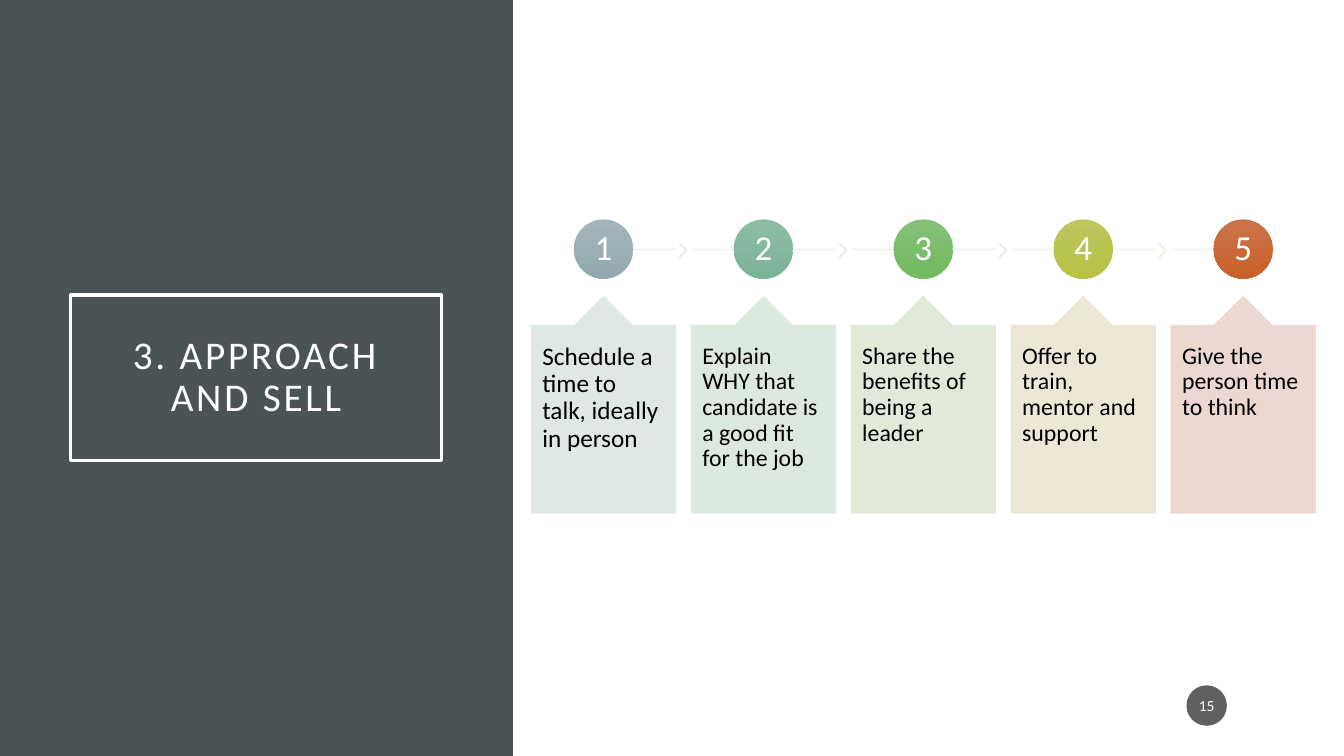
from lxml.etree import SubElement
from pptx import Presentation
from pptx.dml.color import RGBColor
from pptx.enum.shapes import MSO_CONNECTOR as Connector, MSO_SHAPE as Shape
from pptx.enum.text import MSO_ANCHOR as Anchor, PP_ALIGN as Align
from pptx.oxml.ns import qn
from pptx.util import Cm, Pt

FONT = "Calibri"
WHITE = RGBColor(0xFF, 0xFF, 0xFF)
BLACK = RGBColor(0x00, 0x00, 0x00)
SLATE = RGBColor(0x4A, 0x53, 0x56)
BADGE = RGBColor(0x1D, 0x1D, 0x1D)

# Step layout in centimetres
FIRST_LEFT, PITCH = 13.39, 4.03
CARD_WIDTH, CARD_HEIGHT, CARD_TOP = 3.64, 5.46, 7.47
CIRCLE, AXIS = 1.48, 6.28
TIP = 0.2

# Text, size, circle top, circle bottom, circle outline, card, line, chevron
STEPS = [
    ("Schedule a time to talk, ideally in person", 18,
     RGBColor(0xA3, 0xB5, 0xBB), RGBColor(0x93, 0xA9, 0xAF), RGBColor(0x9B, 0xAF, 0xB5),
     RGBColor(0xDC, 0xE6, 0xE4), RGBColor(0xDE, 0xE3, 0xE5), RGBColor(0xDD, 0xE5, 0xE5)),
    ("Explain WHY that candidate is a good fit for the job", 17,
     RGBColor(0x8D, 0xBC, 0xA5), RGBColor(0x7B, 0xB3, 0x98), RGBColor(0x83, 0xB7, 0x9E),
     RGBColor(0xD8, 0xE7, 0xDB), RGBColor(0xDB, 0xE6, 0xE2), RGBColor(0xDA, 0xE7, 0xDE)),
    ("Share the benefits of being a leader", 17,
     RGBColor(0x85, 0xC0, 0x76), RGBColor(0x73, 0xB9, 0x60), RGBColor(0x7A, 0xBC, 0x69),
     RGBColor(0xDE, 0xE8, 0xD5), RGBColor(0xD8, 0xE7, 0xD7), RGBColor(0xDB, 0xE8, 0xD6)),
    ("Offer to train, mentor and support", 17,
     RGBColor(0xBE, 0xC6, 0x5E), RGBColor(0xB8, 0xC2, 0x43), RGBColor(0xBA, 0xC3, 0x4D),
     RGBColor(0xEA, 0xE6, 0xD1), RGBColor(0xE3, 0xE9, 0xD4), RGBColor(0xE8, 0xE9, 0xD2)),
    ("Give the person time to think", 17,
     RGBColor(0xCC, 0x73, 0x4B), RGBColor(0xC8, 0x61, 0x28), RGBColor(0xC9, 0x67, 0x31),
     RGBColor(0xEB, 0xD3, 0xCD), RGBColor(0xEA, 0xE1, 0xD0), None),
]


def set_opacity(shape, percent):
    for color in shape._element.spPr.iter(qn("a:srgbClr")):
        SubElement(color, qn("a:alpha"), val=str(percent * 1000))


def add_box(slide, kind, left, top, width, height, fill=None, line=None, weight=0.5):
    box = slide.shapes.add_shape(kind, Cm(left), Cm(top), Cm(width), Cm(height))
    box.shadow.inherit = False
    if fill is None:
        box.fill.background()
    else:
        box.fill.solid()
        box.fill.fore_color.rgb = fill
    if line is None:
        box.line.fill.background()
    else:
        box.line.color.rgb = line
        box.line.width = Pt(weight)
    return box


def write(box, text, size, color, align=Align.CENTER, anchor=Anchor.MIDDLE,
          inset=(0.05, 0.05), spacing=0.9):
    frame = box.text_frame
    frame.word_wrap = True
    frame.vertical_anchor = anchor
    frame.margin_left = frame.margin_right = Cm(inset[0])
    frame.margin_top = frame.margin_bottom = Cm(inset[1])
    frame.text = text
    para = frame.paragraphs[0]
    para.alignment = align
    para.line_spacing = spacing
    span = para.runs[0]
    span.font.name = FONT
    span.font.size = Pt(size)
    span.font.color.rgb = color
    return span


def add_line(slide, start, end, color):
    line = slide.shapes.add_connector(
        Connector.STRAIGHT, Cm(start), Cm(AXIS), Cm(end), Cm(AXIS))
    line.line.color.rgb = color
    line.line.width = Pt(0.5)
    set_opacity(line, 90)
    SubElement(line._element.spPr, qn("a:effectLst"))


def add_circle(slide, left, number, light, dark, outline):
    circle = add_box(slide, Shape.OVAL, left, AXIS - CIRCLE / 2, CIRCLE, CIRCLE,
                     line=outline)
    circle.fill.gradient()
    circle.fill.gradient_angle = 270
    for stop, color in zip(circle.fill.gradient_stops, (light, dark)):
        stop.color.rgb = color
    write(circle, str(number), 25, WHITE)


def add_card(slide, left, text, size, color):
    card = add_box(slide, Shape.UP_ARROW_CALLOUT, left, CARD_TOP,
                   CARD_WIDTH, CARD_HEIGHT, color, color)
    body_share = 1 - TIP * CARD_WIDTH / CARD_HEIGHT
    for index, value in enumerate((2 * TIP, TIP, TIP, body_share)):
        card.adjustments[index] = value
    set_opacity(card, 90)
    write(card, text, size, BLACK, Align.LEFT, Anchor.TOP, (0.28, 0.46))


def add_step(slide, index, step):
    text, size, light, dark, outline, card, line, chevron = step
    left = FIRST_LEFT + index * PITCH
    right = left + CARD_WIDTH
    center = left + CARD_WIDTH / 2
    is_first, is_last = index == 0, index == len(STEPS) - 1
    add_line(slide, center if is_first else left, center if is_last else right, line)
    if not is_last:
        arrow = add_box(slide, Shape.CHEVRON, right + 0.09, 6.13, 0.18, 0.36,
                        chevron, chevron)
        arrow.adjustments[0] = 0.9
        set_opacity(arrow, 90)
    add_circle(slide, center - CIRCLE / 2, index + 1, light, dark, outline)
    add_card(slide, left, text, size, card)


def main():
    deck = Presentation()
    deck.slide_width, deck.slide_height = Cm(33.87), Cm(19.05)
    slide = deck.slides.add_slide(deck.slide_layouts[6])

    # Title panel
    add_box(slide, Shape.RECTANGLE, 0, 0, 12.93, 19.05, SLATE)
    title = add_box(slide, Shape.RECTANGLE, 1.78, 7.44, 9.35, 4.17,
                    line=WHITE, weight=2.5)
    span = write(title, "3. APPROACH AND SELL", 28, WHITE, inset=(0.51, 0.51))
    span.font._element.set("spc", "200")

    # Numbered steps
    for index, step in enumerate(STEPS):
        add_step(slide, index, step)

    # Slide number
    badge = add_box(slide, Shape.OVAL, 29.9, 17.27, 1.02, 1.02, BADGE)
    set_opacity(badge, 70)
    write(badge, "15", 11, WHITE, spacing=1.0)

    deck.save("out.pptx")


if __name__ == "__main__":
    main()
